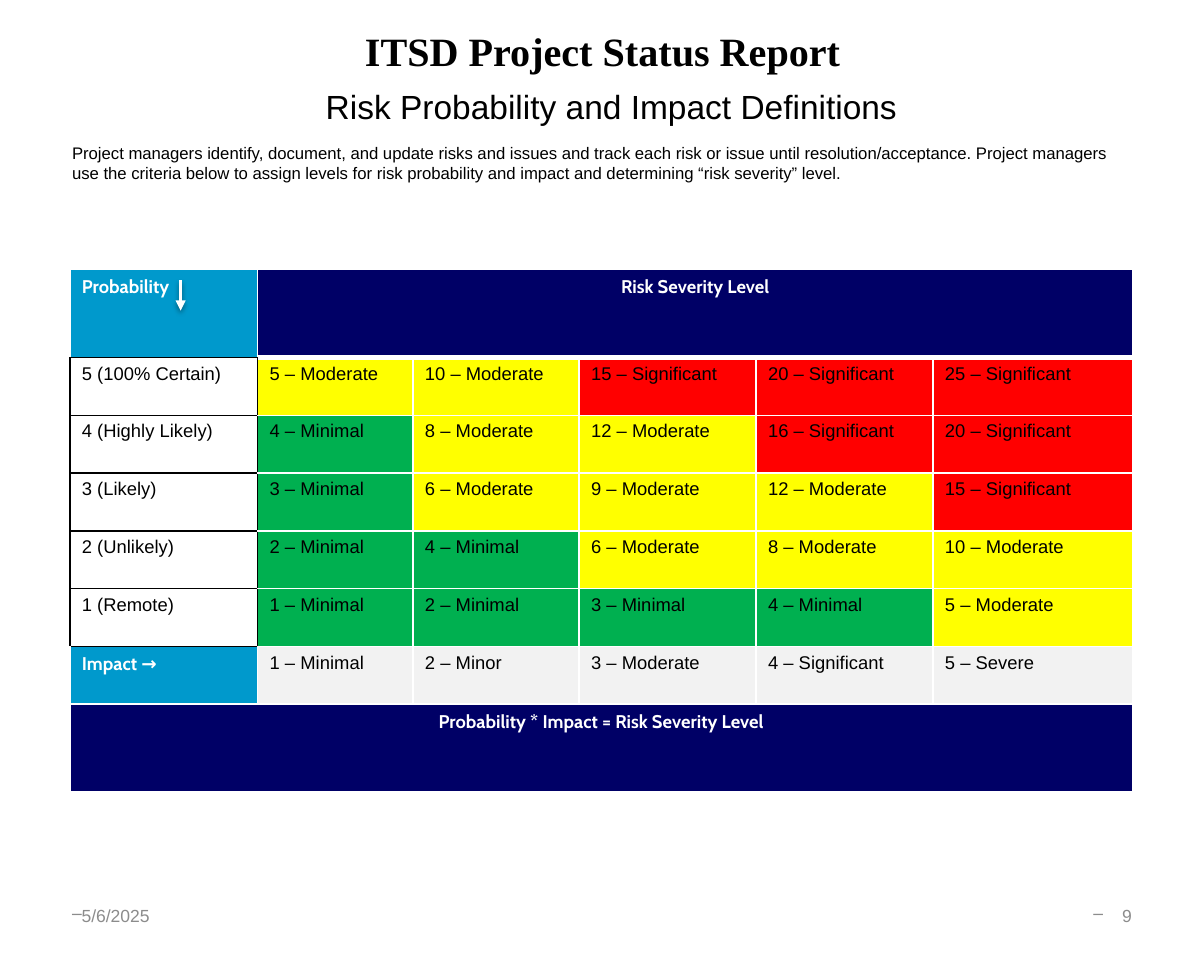
from lxml import etree
from pptx import Presentation
from pptx import util as u
from pptx.dml.color import RGBColor
from pptx.enum import shapes, text
from pptx.oxml import ns

WIDTH, HEIGHT = 10, 8
COLORS = {
    "text": "000000", "white": "FFFFFF", "muted": "8C8C8C",
    "navy": "000066", "blue": "0099CC", "impact": "F2F2F2",
    "Minimal": "00B050", "Moderate": "FFFF00", "Significant": "FF0000",
}
BANNER = "ITSD Project Status Report"
TITLE = "Risk Probability and Impact Definitions"
INTRO = (
    "Project managers identify, document, and update risks and issues and "
    "track each risk or issue until resolution/acceptance. Project managers "
    "use the criteria below to assign levels for risk probability and impact "
    "and determining “risk severity” level."
)
DATE, PAGE = "5/6/2025", "9"
CORNER, SEVERITY = "Probability", "Risk Severity Level"
PROBABILITIES = ["5 (100% Certain)", "4 (Highly Likely)", "3 (Likely)",
                 "2 (Unlikely)", "1 (Remote)"]
IMPACT = "Impact →"
IMPACTS = ["Minimal", "Minor", "Moderate", "Significant", "Severe"]
FORMULA = "Probability * Impact = Risk Severity Level"
SEVERITY_LIMITS = [(4, "Minimal"), (12, "Moderate"), (25, "Significant")]

TABLE_LEFT, TABLE_TOP = 0.58, 2.24
COLUMNS = [1.56, 1.29, 1.38, 1.47, 1.47, 1.66]
ROWS = [0.73] + [0.48] * 6 + [0.73]
IMPACT_ROW, FORMULA_ROW = 6, 7
LEFT, CENTER, RIGHT = (text.PP_ALIGN.LEFT, text.PP_ALIGN.CENTER,
                       text.PP_ALIGN.RIGHT)
HEADING = {"font": "Cabin", "color": "white", "bold": True}


def write(tf, content, size=11, font="Arial", color="text", bold=False,
          align=LEFT, dash_indent=None, spacing=None):
    """Fill a text frame; dash_indent adds a dash bullet hanging by inches."""
    p = tf.paragraphs[0]
    p.alignment = align
    if spacing:
        p.line_spacing = spacing
    if dash_indent is not None:
        pPr = p._p.get_or_add_pPr()
        pPr.set("marL", str(u.Inches(dash_indent)))
        pPr.set("indent", str(-u.Inches(dash_indent)))
        etree.SubElement(pPr, ns.qn("a:buChar"), char="–")
    r = p.add_run()
    r.text = content
    r.font.size, r.font.name, r.font.bold = u.Pt(size), font, bold
    r.font.color.rgb = RGBColor.from_string(COLORS[color])


def text_box(slide, box, content, anchor=text.MSO_ANCHOR.TOP, **style):
    tf = slide.shapes.add_textbox(*map(u.Inches, box)).text_frame
    tf.word_wrap = True
    tf.vertical_anchor = anchor
    write(tf, content, **style)


def set_borders(cell, row, col):
    """White edges, black around the probability labels."""
    in_grid = 0 < row < IMPACT_ROW
    label = in_grid and col == 0
    black = {
        "L": label or (in_grid and col == 1),
        "R": label,
        "T": label or (row == IMPACT_ROW and col == 0),
        "B": label or (row == 0 and col == 0),
    }
    tcPr = cell._tc.get_or_add_tcPr()
    for side, is_black in black.items():
        thick = row == 0 and col > 0 and side == "B"
        ln = etree.SubElement(tcPr, ns.qn(f"a:ln{side}"),
                              w=str(u.Pt(3 if thick else 1)))
        fill = etree.SubElement(ln, ns.qn("a:solidFill"))
        etree.SubElement(fill, ns.qn("a:srgbClr"),
                         val=COLORS["text" if is_black else "white"])


def cell_content(row, col):
    """Return the wording, fill colour name and text style of a cell."""
    if row == 0:
        if col == 0:
            return CORNER, "blue", HEADING
        return SEVERITY, "navy", {**HEADING, "align": CENTER}
    if row == FORMULA_ROW:
        return FORMULA, "navy", {**HEADING, "align": CENTER}
    if row == IMPACT_ROW:
        if col == 0:
            return IMPACT, "blue", HEADING
        return f"{col} – {IMPACTS[col - 1]}", "impact", {}
    if col == 0:
        return PROBABILITIES[row - 1], None, {}
    score = (IMPACT_ROW - row) * col
    level = next(name for limit, name in SEVERITY_LIMITS if score <= limit)
    return f"{score} – {level}", level, {}


def add_risk_table(slide):
    frame = slide.shapes.add_table(
        len(ROWS), len(COLUMNS), u.Inches(TABLE_LEFT), u.Inches(TABLE_TOP),
        u.Inches(sum(COLUMNS)), u.Inches(sum(ROWS)))
    table = frame.table
    table.first_row = table.horz_banding = False
    for column, width in zip(table.columns, COLUMNS):
        column.width = u.Inches(width)
    for line, height in zip(table.rows, ROWS):
        line.height = u.Inches(height)
    last = len(COLUMNS) - 1
    table.cell(0, 1).merge(table.cell(0, last))
    table.cell(FORMULA_ROW, 0).merge(table.cell(FORMULA_ROW, last))
    for row in range(len(ROWS)):
        for col in range(len(COLUMNS)):
            cell = table.cell(row, col)
            content, fill, style = cell_content(row, col)
            set_borders(cell, row, col)
            if fill:
                cell.fill.solid()
                cell.fill.fore_color.rgb = RGBColor.from_string(COLORS[fill])
            else:
                cell.fill.background()
            if not cell.is_spanned:
                write(cell.text_frame, content, **style)


def add_probability_arrow(slide):
    x, top, bottom = map(u.Inches, (1.5, 2.33, 2.58))
    arrow = slide.shapes.add_connector(
        shapes.MSO_CONNECTOR.STRAIGHT, x, top, x, bottom)
    arrow.line.width = u.Pt(2)
    arrow.line.color.rgb = RGBColor.from_string(COLORS["white"])
    etree.SubElement(arrow.line._get_or_add_ln(), ns.qn("a:tailEnd"),
                     type="triangle")
    effects = etree.SubElement(arrow._element.spPr, ns.qn("a:effectLst"))
    shadow = etree.SubElement(
        effects, ns.qn("a:outerShdw"), blurRad=str(u.Pt(3.1)),
        dist=str(u.Pt(1.6)), dir=str(90 * 60000), rotWithShape="0")
    tint = etree.SubElement(shadow, ns.qn("a:srgbClr"), val=COLORS["text"])
    etree.SubElement(tint, ns.qn("a:alpha"), val="38000")


def main():
    prs = Presentation()
    prs.slide_width, prs.slide_height = u.Inches(WIDTH), u.Inches(HEIGHT)
    slide = prs.slides.add_slide(prs.slide_layouts[6])
    middle = text.MSO_ANCHOR.MIDDLE

    text_box(slide, (1.42, 0.17, 7.17, 0.51), BANNER, size=24,
             font="Times New Roman", bold=True, align=CENTER)
    text_box(slide, (0.58, 0.67, 9, 0.42), TITLE, anchor=middle, size=20,
             align=CENTER)
    text_box(slide, (0.5, 1.14, 8.92, 0.44), INTRO, size=10)
    add_risk_table(slide)
    add_probability_arrow(slide)

    footer = {"anchor": middle, "size": 10.5, "color": "muted", "spacing": 0.8}
    footer_width, margin = 2.33, 0.5
    text_box(slide, (margin, 7.41, footer_width, 0.43), DATE,
             dash_indent=0, **footer)
    text_box(slide, (WIDTH - margin - footer_width, 7.41, footer_width, 0.43),
             PAGE, align=RIGHT, dash_indent=0.24, **footer)
    prs.save("out.pptx")


if __name__ == "__main__":
    main()
